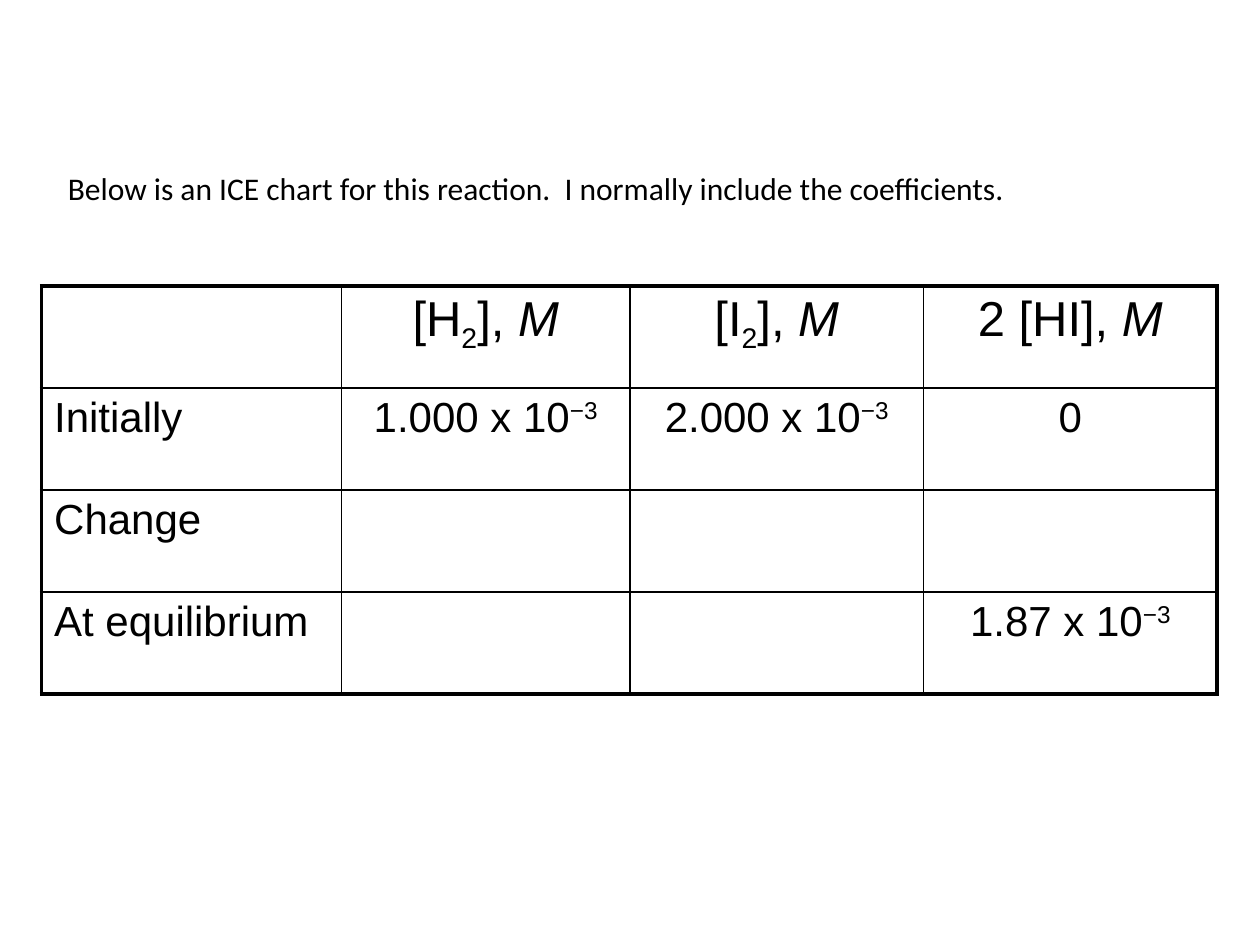
"""Build a slide with an ICE chart for the hydrogen iodide equilibrium."""
from dataclasses import dataclass
from typing import NamedTuple

from lxml.etree import SubElement
from pptx import Presentation
from pptx.dml.color import RGBColor
from pptx.enum.text import PP_ALIGN
from pptx.oxml.ns import qn
from pptx.util import Inches, Pt


@dataclass(frozen=True)
class Theme:
    ink: str = "000000"
    note_font: str = "Calibri"
    table_font: str = "Arial"
    note_size: float = 18
    head_size: float = 28
    body_size: float = 24
    thin: float = 1
    thick: float = 2.25


class Span(NamedTuple):
    text: str
    italic: bool = False
    baseline: int = 0


THEME = Theme()
PAGE_WIDTH, PAGE_HEIGHT = 10, 7.5
TABLE_LEFT, TABLE_TOP = 0.33, 2.27
COLUMN_WIDTHS = (2.38, 2.29, 2.33, 2.33)
ROW_HEIGHT = 0.81
MOLAR = Span("M", italic=True)


def diatomic(symbol: str) -> list[Span]:
    return [Span(f"[{symbol}"), Span("2", baseline=-25), Span("], "), MOLAR]


def thousandths(number: str) -> list[Span]:
    return [Span(f"{number} x 10"), Span("−3", baseline=30)]


ICE_ROWS = (
    ([], diatomic("H"), diatomic("I"), [Span("2 [HI], "), MOLAR]),
    ([Span("Initially")], thousandths("1.000"), thousandths("2.000"), [Span("0")]),
    ([Span("Change")], [], [], []),
    ([Span("At equilibrium")], [], [], thousandths("1.87")),
)


def add_spans(para, spans: list[Span], font: str, size: float) -> None:
    for span in spans:
        run = para.add_run()
        run.text = span.text
        run.font.name = font
        run.font.size = Pt(size)
        run.font.italic = span.italic
        run.font.color.rgb = RGBColor.from_string(THEME.ink)
        if span.baseline:
            run._r.get_or_add_rPr().set("baseline", str(span.baseline * 1000))


def set_borders(cell, outer: dict[str, bool]) -> None:
    properties = cell._tc.get_or_add_tcPr()
    for side, is_outer in outer.items():
        width = THEME.thick if is_outer else THEME.thin
        line = SubElement(properties, qn(f"a:ln{side}"), w=str(int(Pt(width))))
        fill = SubElement(line, qn("a:solidFill"))
        SubElement(fill, qn("a:srgbClr"), val=THEME.ink)


def add_note(page, text: str) -> None:
    box = page.shapes.add_textbox(Inches(0.44), Inches(1.29), Inches(8.93), Inches(0.4))
    box.text_frame.word_wrap = True
    add_spans(box.text_frame.paragraphs[0], [Span(text)], THEME.note_font, THEME.note_size)


def add_ice_table(page) -> None:
    row_count, column_count = len(ICE_ROWS), len(COLUMN_WIDTHS)
    table = page.shapes.add_table(
        row_count, column_count, Inches(TABLE_LEFT), Inches(TABLE_TOP),
        Inches(sum(COLUMN_WIDTHS)), Inches(ROW_HEIGHT * row_count),
    ).table
    table.first_row = table.horz_banding = False
    for column, width in zip(table.columns, COLUMN_WIDTHS):
        column.width = Inches(width)
    for row_index, row in enumerate(ICE_ROWS):
        table.rows[row_index].height = Inches(ROW_HEIGHT)
        size = THEME.body_size if row_index else THEME.head_size
        for column_index, spans in enumerate(row):
            cell = table.cell(row_index, column_index)
            set_borders(cell, {
                "L": column_index == 0,
                "R": column_index == column_count - 1,
                "T": row_index == 0,
                "B": row_index == row_count - 1,
            })
            cell.fill.background()
            para = cell.text_frame.paragraphs[0]
            para.alignment = PP_ALIGN.CENTER if column_index else PP_ALIGN.LEFT
            add_spans(para, spans, THEME.table_font, size)


def main() -> None:
    deck = Presentation()
    deck.slide_width, deck.slide_height = Inches(PAGE_WIDTH), Inches(PAGE_HEIGHT)
    page = deck.slides.add_slide(deck.slide_layouts[6])
    add_ice_table(page)
    add_note(page, "Below is an ICE chart for this reaction.  I normally include the coefficients.")
    deck.save("out.pptx")


if __name__ == "__main__":
    main()
